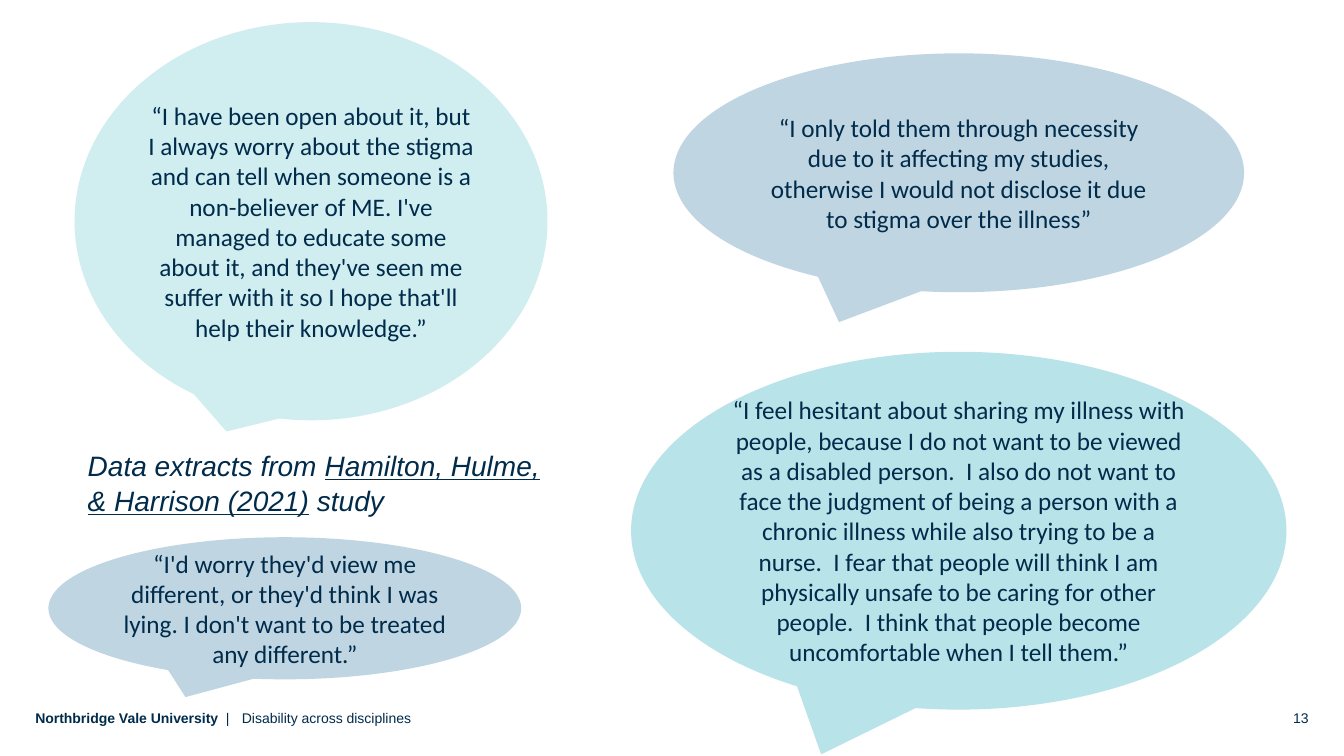
from lxml import etree
from pptx import Presentation
from pptx.dml.color import RGBColor
from pptx.enum.shapes import MSO_SHAPE as Shape
from pptx.enum.text import MSO_ANCHOR as Anchor, PP_ALIGN as Align
from pptx.oxml.ns import qn
from pptx.util import Inches, Pt

COLOURS = {"navy": "002B4B", "pale": "C1E7EB", "aqua": "A1DAE1", "blue": "AAC7D8"}
OPACITY = 75  # percent
DEFAULT_TIP = (-0.21, 0.625)

# Quotes: box (left, top, width, height), colour, tip offset, text
QUOTES = [
    ((0.74, 0.22, 4.69, 3.95), "pale", (-0.179, 0.528),
     "“I have been open about it, but I always worry about the stigma and can tell "
     "when someone is a non-believer of ME. I've managed to educate some about it, "
     "and they've seen me suffer with it so I hope that'll help their knowledge.”"),
    ((6.26, 3.49, 6.5, 3.55), "aqua", DEFAULT_TIP,
     "“I feel hesitant about sharing my illness with people, because I do not want "
     "to be viewed as a disabled person.  I also do not want to face the judgment of "
     "being a person with a chronic illness while also trying to be a nurse.  I fear "
     "that people will think I am physically unsafe to be caring for other people.  "
     "I think that people become uncomfortable when I tell them.”"),
    ((0.48, 5.33, 4.69, 1.41), "blue", DEFAULT_TIP,
     "“I'd worry they'd view me different, or they'd think I was lying. I don't want "
     "to be treated any different.”"),
    ((6.68, 0.53, 5.66, 2.37), "blue", DEFAULT_TIP,
     "“I only told them through necessity due to it affecting my studies, otherwise "
     "I would not disclose it due to stigma over the illness”"),
]

# Labels: box, size, alignment, line spacing, runs of (text, font settings)
LABELS = [
    ((0.35, 7.04, 2.01, 0.24), 10, Align.LEFT, 1.0,
     [("Northbridge Vale University ", {"bold": True}), (" |", {})]),
    ((2.4, 7.04, 3.86, 0.24), 10, Align.LEFT, 1.0,
     [("Disability across disciplines", {})]),
    ((12, 7.04, 0.98, 0.28), 10, Align.RIGHT, 1.0, [("13", {})]),
    ((0.87, 4.43, 4.56, 0.59), 20, Align.LEFT, 1.05,
     [("Data extracts from ", {"italic": True}),
      ("Hamilton, Hulme, & Harrison (2021)", {"italic": True, "underline": True}),
      (" study", {"italic": True})]),
]


def rgb(name):
    return RGBColor.from_string(COLOURS[name])


def write(shape, runs, font_name, size, align, inset, spacing=1.0):
    frame = shape.text_frame
    frame.word_wrap = True
    frame.margin_left = frame.margin_right = Inches(inset)
    frame.margin_top = frame.margin_bottom = Inches(inset)
    paragraph = frame.paragraphs[0]
    paragraph.alignment = align
    paragraph.line_spacing = spacing
    for text, settings in runs:
        run = paragraph.add_run()
        run.text = text
        run.font.name = font_name
        run.font.size = Pt(size)
        run.font.color.rgb = rgb("navy")
        for key, value in settings.items():
            setattr(run.font, key, value)


def add_quote(slide, box, colour, tip, text):
    bubble = slide.shapes.add_shape(Shape.OVAL_CALLOUT, *map(Inches, box))
    bubble.adjustments[0], bubble.adjustments[1] = tip
    bubble.shadow.inherit = False
    bubble.line.fill.background()
    bubble.fill.solid()
    bubble.fill.fore_color.rgb = rgb(colour)
    fill_colour = bubble.fill._xPr.find(qn("a:solidFill"))[0]
    etree.SubElement(fill_colour, qn("a:alpha")).set("val", str(OPACITY * 1000))
    bubble.text_frame.vertical_anchor = Anchor.MIDDLE
    write(bubble, [(text, {})], "Calibri", 18, Align.CENTER, 0.04)


def main():
    presentation = Presentation()
    presentation.slide_width = Inches(13.33)
    presentation.slide_height = Inches(7.5)
    slide = presentation.slides.add_slide(presentation.slide_layouts[6])

    # Speech bubbles
    for quote in QUOTES:
        add_quote(slide, *quote)

    # Source line and footer
    for box, size, align, spacing, runs in LABELS:
        label = slide.shapes.add_textbox(*map(Inches, box))
        write(label, runs, "Arial", size, align, 0, spacing)

    presentation.save("out.pptx")


if __name__ == "__main__":
    main()
